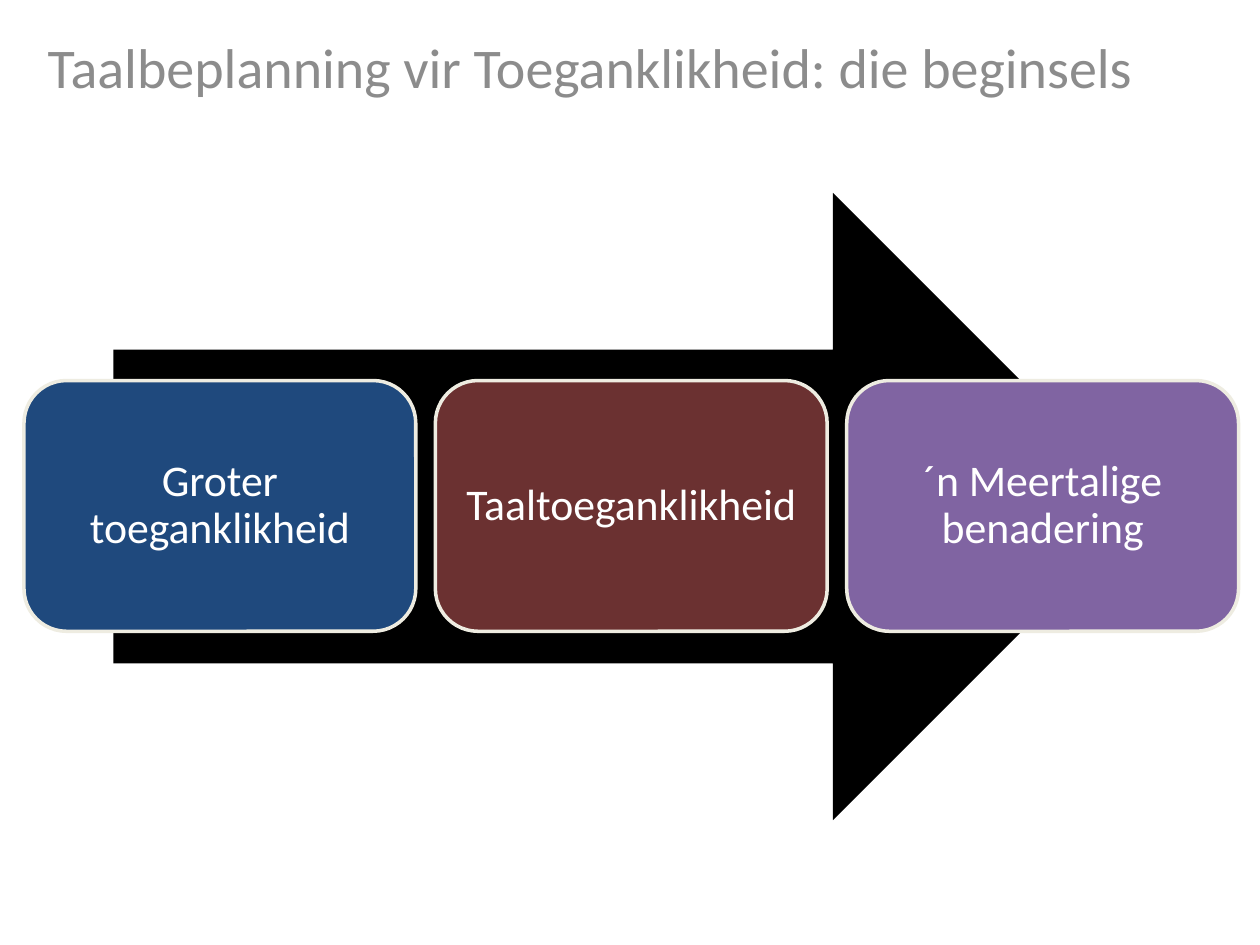
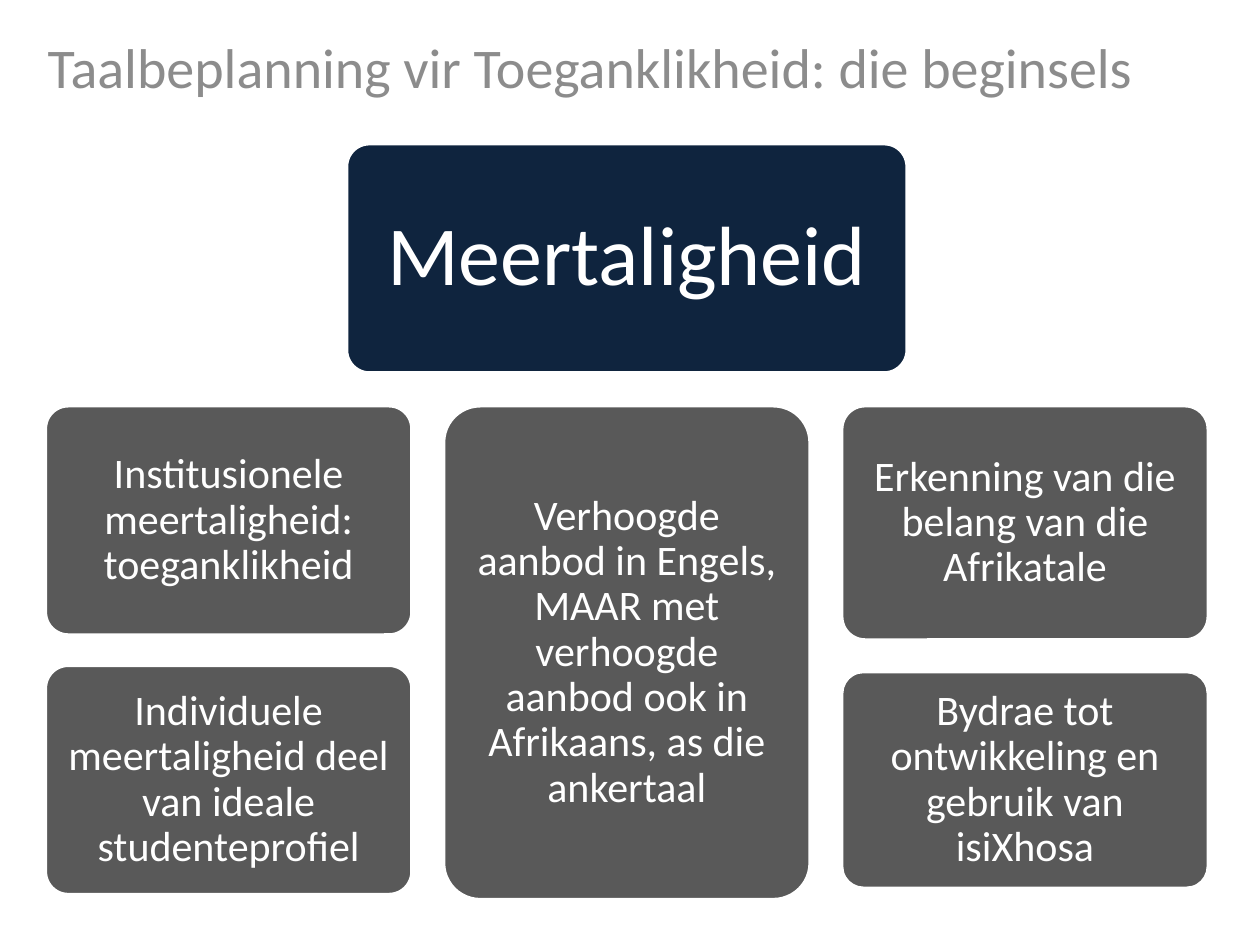
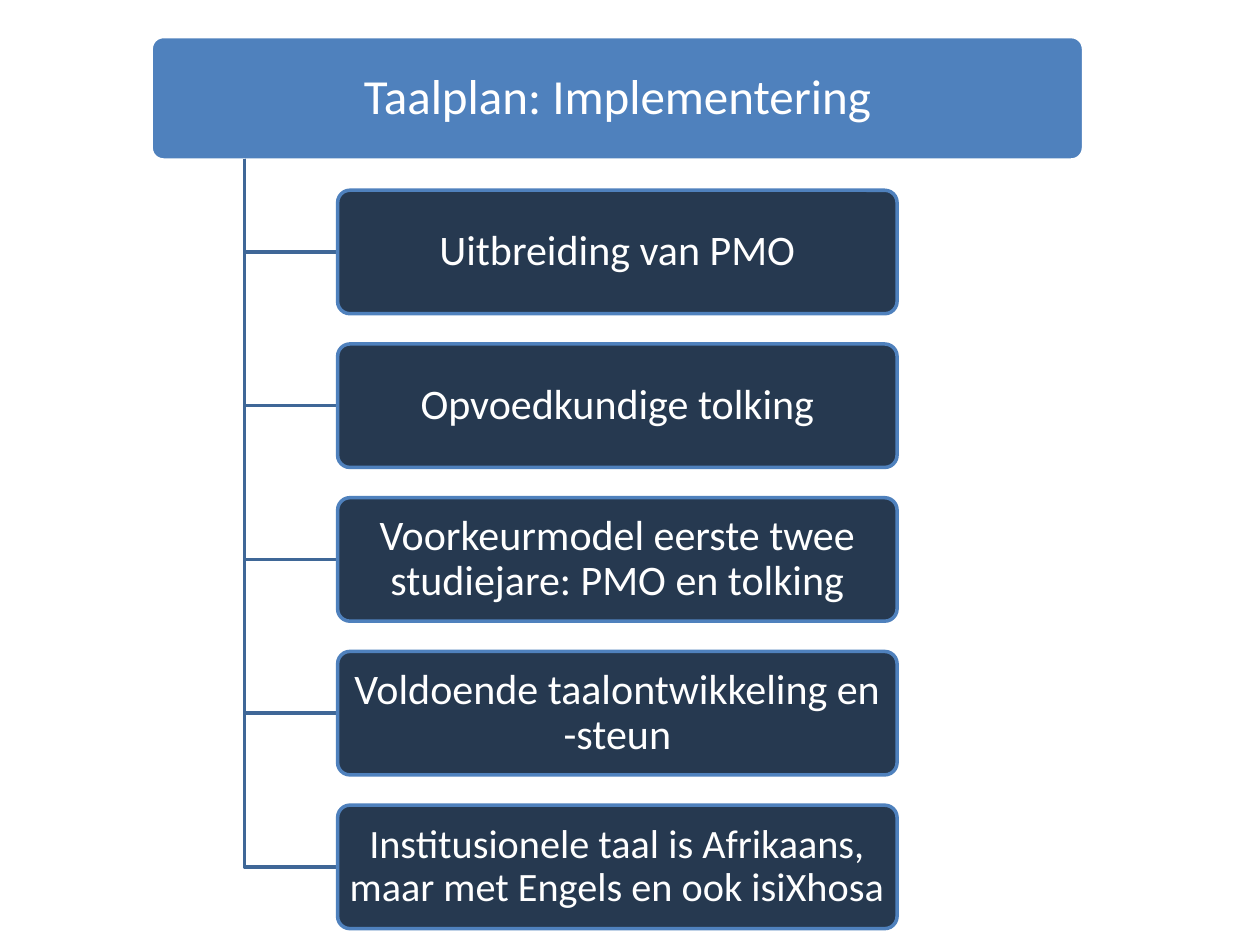
from dataclasses import dataclass, replace

from lxml import etree
from pptx import Presentation
from pptx import util as u
from pptx.dml.color import RGBColor
from pptx.enum import shapes, text
from pptx.oxml.ns import qn

COLS, ROWS = 100, 75
SLIDE_W, SLIDE_H = u.Inches(10), u.Inches(7.5)


@dataclass(frozen=True)
class Theme:
    font: str = "Calibri"
    white: str = "FFFFFF"
    title: str = "8C8C8C"
    arrow: str = "000000"
    cream: str = "EEECE1"
    blue: str = "1F497D"
    maroon: str = "6B3131"
    purple: str = "8064A2"
    navy: str = "0F243E"
    grey: str = "595959"
    sky: str = "4F81BD"
    link: str = "3F6797"
    title_size: float = 32
    hero_size: float = 48
    header_size: float = 28
    step_size: float = 25
    body_size: float = 24
    small_size: float = 23
    line_width: float = 2
    line_spacing: float = 0.9


THEME = Theme()


@dataclass(frozen=True)
class Style:
    fill: str
    line: str
    size: float
    inset_x: float = 1
    inset_y: float = 1
    corner: float = 0.1
    opacity: int = 100


@dataclass(frozen=True)
class Box:
    text: str
    x: float
    y: float
    w: float
    h: float
    style: Style


STEP = Style(THEME.blue, THEME.cream, THEME.step_size, corner=0.17)
HERO = Style(THEME.navy, THEME.white, THEME.hero_size, 2, 2)
TILE = Style(THEME.grey, THEME.white, THEME.body_size)
HEADER = Style(THEME.sky, THEME.white, THEME.header_size, 0.6, 0.4)
ITEM = Style(THEME.navy, THEME.sky, THEME.body_size, 0.5, 0.3, opacity=90)


def col(n: float) -> int:
    return round(SLIDE_W * n / COLS)


def row(n: float) -> int:
    return round(SLIDE_H * n / ROWS)


def rgb(color: str) -> RGBColor:
    return RGBColor.from_string(color)


def write(tf, content: str, size: float, color: str) -> None:
    tf.text = content
    tf.word_wrap = True
    font = tf.paragraphs[0].runs[0].font
    font.name, font.size = THEME.font, u.Pt(size)
    font.color.rgb = rgb(color)


def outline(sp, color: str) -> None:
    sp.shadow.inherit = False
    sp.line.color.rgb = rgb(color)
    sp.line.width = u.Pt(THEME.line_width)


def add_title(slide, content: str) -> None:
    sp = slide.shapes.add_textbox(col(2.8), row(2.1), col(94.5), row(71.7))
    write(sp.text_frame, content, THEME.title_size, THEME.title)


def add_box(slide, box: Box) -> None:
    style = box.style
    sp = slide.shapes.add_shape(
        shapes.MSO_SHAPE.ROUNDED_RECTANGLE, col(box.x), row(box.y), col(box.w), row(box.h)
    )
    sp.adjustments[0] = style.corner
    sp.fill.solid()
    sp.fill.fore_color.rgb = rgb(style.fill)
    if style.opacity < 100:
        color = sp.fill._xPr.find(qn("a:solidFill"))[0]
        etree.SubElement(color, qn("a:alpha")).set("val", str(style.opacity * 1000))
    outline(sp, style.line)
    tf = sp.text_frame
    write(tf, box.text, style.size, THEME.white)
    tf.margin_left = tf.margin_right = col(style.inset_x)
    tf.margin_top = tf.margin_bottom = row(style.inset_y)
    tf.vertical_anchor = text.MSO_ANCHOR.MIDDLE
    p = tf.paragraphs[0]
    p.alignment = text.PP_ALIGN.CENTER
    p.line_spacing = THEME.line_spacing


def add_branch(slide, x: float, top: float, bottom: float, end: float) -> None:
    builder = slide.shapes.build_freeform(col(x), row(top))
    builder.add_line_segments([(col(x), row(bottom)), (col(end), row(bottom))], close=False)
    sp = builder.convert_to_shape()
    sp.fill.background()
    outline(sp, THEME.link)


def build_steps(slide) -> None:
    sp = slide.shapes.add_shape(
        shapes.MSO_SHAPE.RIGHT_ARROW, col(9), row(15.3), col(82), row(49.8)
    )
    sp.shadow.inherit = False
    sp.fill.solid()
    sp.fill.fore_color.rgb = rgb(THEME.arrow)
    sp.line.fill.background()
    steps = [
        ("Groter toeganklikheid", THEME.blue),
        ("Taaltoeganklikheid", THEME.maroon),
        ("´n Meertalige benadering", THEME.purple),
    ]
    for i, (label, fill) in enumerate(steps):
        add_box(slide, Box(label, 1.9 + i * 32.65, 30.2, 31.1, 19.9, replace(STEP, fill=fill)))


def build_tiles(slide) -> None:
    add_box(slide, Box("Meertaligheid", 27.5, 11.4, 44.5, 18.2, HERO))
    tiles = [
        (0, 32.2, 18.2, "Institusionele meertaligheid: toeganklikheid"),
        (0, 52.8, 18.2, "Individuele meertaligheid deel van ideale studenteprofiel"),
        (1, 32.2, 39.2, "Verhoogde aanbod in Engels, MAAR met verhoogde aanbod ook in "
                        "Afrikaans, as die ankertaal"),
        (2, 32.2, 18.6, "Erkenning van die belang van die Afrikatale"),
        (2, 53.3, 17.2, "Bydrae tot ontwikkeling en gebruik van isiXhosa"),
    ]
    for column, y, h, label in tiles:
        add_box(slide, Box(label, 3.6 + column * 31.6, y, 29.1, h, TILE))


def build_plan(slide) -> None:
    spine_x, item_x, height = 19.4, 26.8, 9.8
    add_box(slide, Box("Taalplan: Implementering", 12, 2.9, 74, height, HEADER))
    small = replace(ITEM, size=THEME.small_size)
    items = [
        ("Uitbreiding van PMO", ITEM),
        ("Opvoedkundige tolking", ITEM),
        ("Voorkeurmodel eerste twee studiejare: PMO en tolking", ITEM),
        ("Voldoende taalontwikkeling en -steun", ITEM),
        ("Institusionele taal is Afrikaans, maar met Engels en ook isiXhosa", small),
    ]
    for i, (label, style) in enumerate(items):
        y = 15.1 + i * 12.2
        add_branch(slide, spine_x, 12.6, y + height / 2, item_x)
        add_box(slide, Box(label, item_x, y, 44.4, height, style))


def main() -> None:
    prs = Presentation()
    prs.slide_width, prs.slide_height = SLIDE_W, SLIDE_H
    heading = "Taalbeplanning vir Toeganklikheid: die beginsels"
    for title, build in [(heading, build_steps), (heading, build_tiles), (None, build_plan)]:
        slide = prs.slides.add_slide(prs.slide_layouts[6])
        if title:
            add_title(slide, title)
        build(slide)
    prs.save("out.pptx")


if __name__ == "__main__":
    main()
